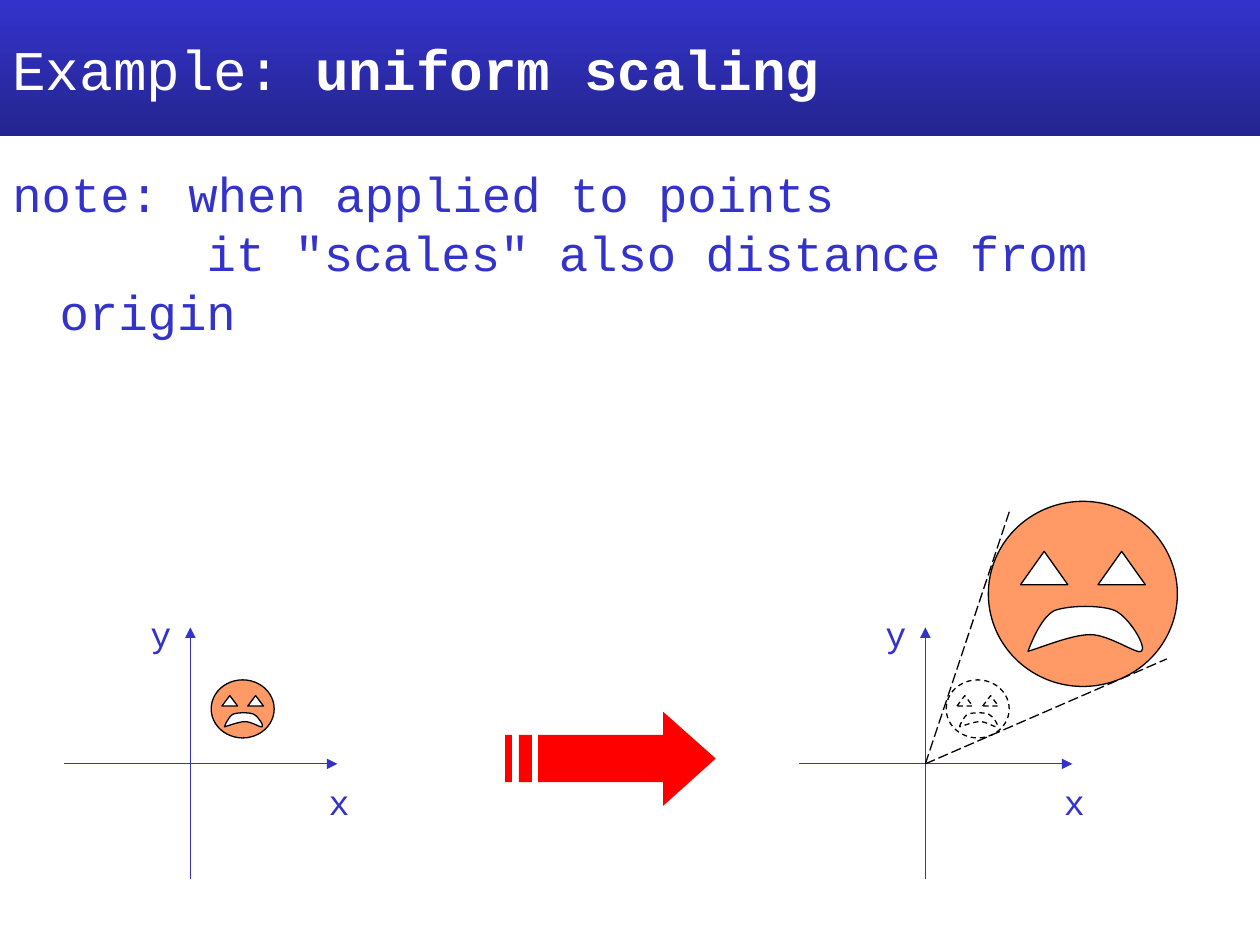
import pptx
import pptx.dml.color
import pptx.enum.dml
import pptx.enum.shapes
import pptx.enum.text
import pptx.oxml.ns
import pptx.util
from lxml import etree

Pt = pptx.util.Pt
qn = pptx.oxml.ns.qn
SHAPE = pptx.enum.shapes.MSO_SHAPE
DASH = pptx.enum.dml.MSO_LINE
ANCHOR = pptx.enum.text.MSO_ANCHOR

FONT = "Courier New"
COLOURS = {"blue": "3333CC", "navy": "24248F", "white": "FFFFFF",
           "red": "FF0000", "orange": "FF9966", "black": "000000"}

# Mouth outline as fractions of the face: start, then three points per curve
MOUTH = [
    (0.21, 0.81),
    (0.21, 0.81), (0.27, 0.63), (0.35, 0.59),
    (0.43, 0.56), (0.60, 0.56), (0.67, 0.59),
    (0.75, 0.63), (0.84, 0.79), (0.81, 0.81),
    (0.79, 0.83), (0.64, 0.72), (0.54, 0.72),
    (0.44, 0.72), (0.28, 0.79), (0.21, 0.81),
]


def colour(name):
    return pptx.dml.color.RGBColor.from_string(COLOURS[name])


def write_text(shape, paragraphs, size, color, wrap=True, anchor=ANCHOR.TOP,
               left_indent=0, first_indents=(0,), line_spacing=None):
    """Each paragraph is a list of (text, bold) runs."""
    frame = shape.text_frame
    frame.word_wrap = wrap
    frame.vertical_anchor = anchor
    for index, runs in enumerate(paragraphs):
        paragraph = frame.paragraphs[0] if index == 0 else frame.add_paragraph()
        paragraph.alignment = pptx.enum.text.PP_ALIGN.LEFT
        if line_spacing:
            paragraph.line_spacing = line_spacing
        properties = paragraph._p.get_or_add_pPr()
        properties.set("marL", str(Pt(left_indent)))
        properties.set("indent", str(Pt(first_indents[index])))
        for text, bold in runs:
            run = paragraph.add_run()
            run.text = text
            run.font.name = FONT
            run.font.size = Pt(size)
            run.font.bold = bold
            run.font.color.rgb = colour(color)


def add_text(slide, box, paragraphs, **style):
    shape = slide.shapes.add_textbox(*map(Pt, box))
    write_text(shape, paragraphs, **style)


def add_title(slide):
    shape = slide.shapes.add_shape(SHAPE.RECTANGLE, 0, 0, Pt(720), Pt(77.75))
    shape.shadow.inherit = False
    shape.line.fill.background()
    shape.fill.gradient()
    shape.fill.gradient_angle = 270
    for stop, name in zip(shape.fill.gradient_stops, ("blue", "navy")):
        stop.color.rgb = colour(name)
    write_text(shape, [[("Example: ", False), ("uniform scaling", True)]],
               size=32, color="white", anchor=ANCHOR.MIDDLE)


def add_line(slide, start, end, color, dash=None, arrow=False):
    connector = slide.shapes.add_connector(
        pptx.enum.shapes.MSO_CONNECTOR.STRAIGHT, *map(Pt, start + end))
    connector.line.color.rgb = colour(color)
    connector.line.width = Pt(0.75)
    if dash:
        connector.line.dash_style = dash
    if arrow:
        etree.SubElement(connector.line._get_or_add_ln(),
                         qn("a:tailEnd"), type="triangle")
    etree.SubElement(connector._element.spPr, qn("a:effectLst"))


def add_axes(slide, x, y):
    add_line(slide, (x, y + 66), (x, y - 78), "blue", arrow=True)
    add_line(slide, (x - 72, y), (x + 84, y), "blue", arrow=True)
    for name, left, top in (("x", x + 72, y + 6), ("y", x - 30, y - 90)):
        add_text(slide, (left, top, 24.5, 31), [[(name, False)]],
                 size=20, color="blue", wrap=False)


def add_outline(shapes, contours):
    """Draw closed contours, given in points, as one freeform."""
    contours = [[(Pt(x), Pt(y)) for x, y in contour] for contour in contours]
    builder = shapes.build_freeform(*contours[0][0])
    for index, contour in enumerate(contours):
        if index:
            builder.move_to(*contour[0])
        builder.add_line_segments(contour[1:], close=index > 0 or
                                  contour[-1] != contour[0])
    return builder.convert_to_shape()


def bend_segments(shape):
    """Turn every three line segments into one Bezier curve."""
    segments = list(shape._element.iter(qn("a:lnTo")))
    for first in range(0, len(segments), 3):
        curve = etree.Element(qn("a:cubicBezTo"))
        segments[first].addprevious(curve)
        for segment in segments[first:first + 3]:
            curve.append(segment[0])
            segment.getparent().remove(segment)


def add_face(slide, left, top, width, height, skin, dash=None):
    shapes = slide.shapes.add_group_shape().shapes
    head = shapes.add_shape(SHAPE.OVAL, *map(Pt, (left, top, width, height)))
    mouth = add_outline(shapes, [[(left + x * width, top + y * height)
                                  for x, y in MOUTH]])
    bend_segments(mouth)
    eyes = [shapes.add_shape(SHAPE.ISOSCELES_TRIANGLE,
                             Pt(left + x * width), Pt(top + 0.27 * height),
                             Pt(0.25 * width), Pt(0.18 * height))
            for x in (0.17, 0.58)]
    for part in (head, mouth, *eyes):
        part.shadow.inherit = False
        part.fill.solid()
        part.fill.fore_color.rgb = colour(skin if part is head else "white")
        part.line.color.rgb = colour("black")
        part.line.width = Pt(0.75)
        if dash:
            part.line.dash_style = dash


def add_striped_arrow(slide):
    top, upper, middle, lower, bottom = 406.8, 420, 433.5, 447, 460.5
    neck, tip = 379, 409
    contours = [[(neck, top), (neck, upper), (307.5, upper), (307.5, lower),
                 (neck, lower), (neck, bottom), (tip, middle)]]
    for left, right in ((296.5, 304), (288.6, 292.5)):
        contours.append([(left, upper), (left, lower),
                         (right, lower), (right, upper)])
    arrow = add_outline(slide.shapes, contours)
    arrow.shadow.inherit = False
    arrow.fill.solid()
    arrow.fill.fore_color.rgb = colour("red")
    arrow.line.fill.background()


def main():
    presentation = pptx.Presentation()
    presentation.slide_width, presentation.slide_height = Pt(720), Pt(540)
    slide = presentation.slides.add_slide(presentation.slide_layouts[6])

    # Title and note
    add_title(slide)
    add_text(slide, (0, 90, 720, 432),
             [[("note: when applied to points", False)],
              [('it "scales" also distance from origin', False)]],
             size=28, color="blue", left_indent=27, first_indents=(-27, 84),
             line_spacing=Pt(33.7))

    # Before scaling
    origin_y, shift = 436.5, 420
    add_axes(slide, 108.8, origin_y)
    add_striped_arrow(slide)
    small_face = (388.5, 36, 33.2)
    add_face(slide, 120.7, *small_face, skin="orange")

    # After scaling, with the projection from the origin
    origin = (108.8 + shift, origin_y)
    add_axes(slide, *origin)
    add_face(slide, 120.7 + shift, *small_face, skin="white", dash=DASH.DASH)
    for end in ((576.8, 292.3), (666.8, 376.5)):
        add_line(slide, origin, end, "black", dash=DASH.LONG_DASH)
    add_face(slide, 564.8, 286.5, 108, 105.8, skin="orange")

    presentation.save("out.pptx")


if __name__ == "__main__":
    main()
